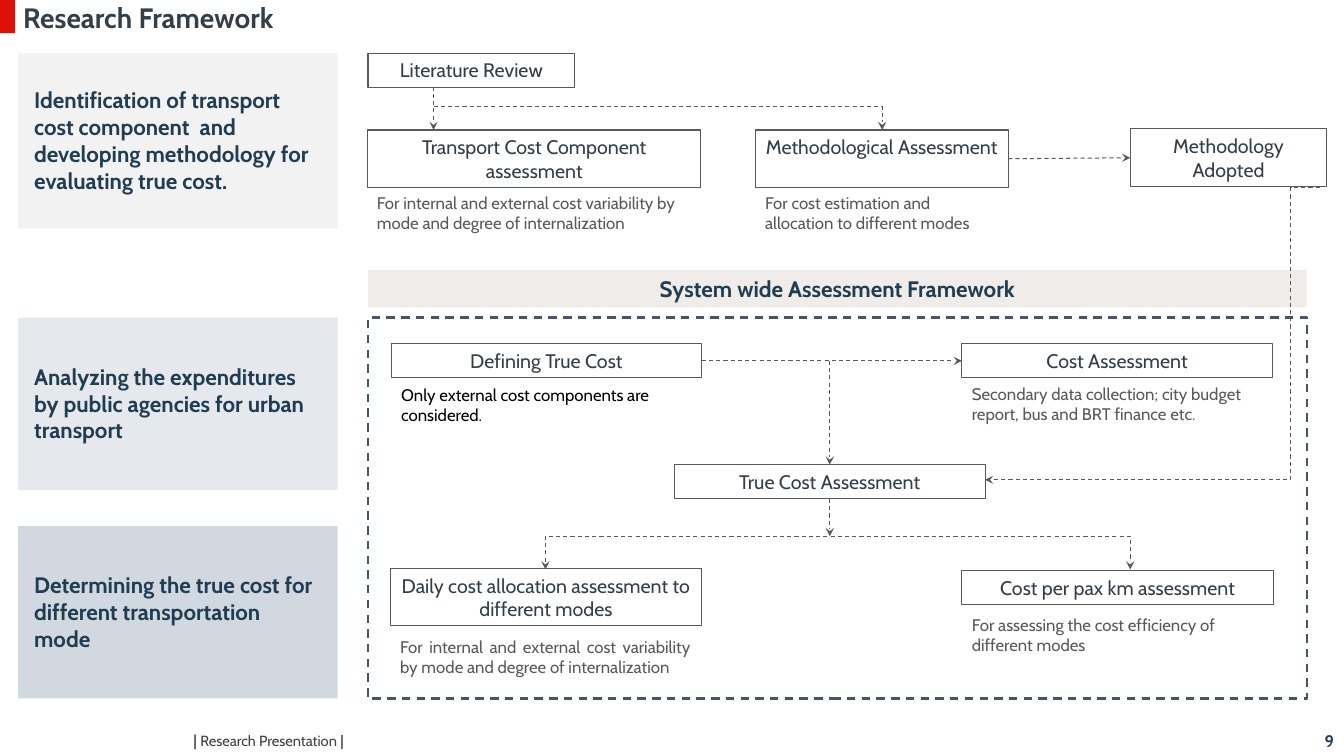
from dataclasses import dataclass

from lxml.etree import SubElement
from pptx import Presentation
from pptx.dml.color import RGBColor
from pptx.enum.dml import MSO_LINE
from pptx.enum.shapes import MSO_CONNECTOR, MSO_SHAPE
from pptx.enum.text import MSO_ANCHOR, PP_ALIGN
from pptx.oxml.ns import qn
from pptx.util import Inches, Pt


@dataclass(frozen=True)
class Theme:
    font: str = "Cabin"
    accent: str = "DF1007"
    navy: str = "203D52"
    slate: str = "44546A"
    ink: str = "343E48"
    footer: str = "404040"
    grey: str = "595959"
    black: str = "000000"
    white: str = "FFFFFF"
    band: str = "EFECEA"
    stages: tuple = ("F2F2F2", "E5E9ED", "D2D8DF")
    title_size: float = 20
    heading_size: float = 16
    box_size: float = 14
    note_size: float = 12
    bar_size: float = 11
    footer_size: float = 10.5


theme = Theme()
prs = Presentation()
prs.slide_width, prs.slide_height = Inches(13.33), Inches(7.5)
s = prs.slides.add_slide(prs.slide_layouts[6])
s.background.fill.solid()
s.background.fill.fore_color.rgb = RGBColor.from_string(theme.white)


def add_box(x, y, w, h, text="", size=theme.box_size, color=theme.ink, bold=False,
            align=PP_ALIGN.LEFT, anchor=MSO_ANCHOR.TOP, fill=None, line=None, panel=False):
    area = [Inches(v) for v in (x, y, w, h)]
    if panel:
        sp = s.shapes.add_shape(MSO_SHAPE.RECTANGLE, *area)
        sp.shadow.inherit = False
        if fill:
            sp.fill.solid()
            sp.fill.fore_color.rgb = RGBColor.from_string(fill)
        else:
            sp.fill.background()
        if line:
            sp.line.color.rgb = RGBColor.from_string(line)
            sp.line.width = Pt(0.75)
        else:
            sp.line.fill.background()
    else:
        sp = s.shapes.add_textbox(*area)
    if text:
        tf = sp.text_frame
        tf.word_wrap = True
        tf.vertical_anchor = anchor
        tf.text = text
        p = tf.paragraphs[0]
        p.alignment = align
        f = p.runs[0].font
        f.name, f.size, f.bold = theme.font, Pt(size), bold
        f.color.rgb = RGBColor.from_string(color)
    return sp


def style_arrow(sp, ends=("tailEnd",)):
    sp.line.color.rgb = RGBColor.from_string(theme.grey)
    sp.line.width = Pt(0.75)
    sp.line.dash_style = MSO_LINE.DASH
    ln = sp.line._get_or_add_ln()
    for end in ends:
        SubElement(ln, qn("a:" + end), type="stealth")
    pr = sp._element.spPr
    if pr.find(qn("a:effectLst")) is None:
        SubElement(pr, qn("a:effectLst"))


add_box(0, 0, 0.15, 0.33, fill=theme.accent, panel=True)
title = add_box(0, 0, 12.41, 0.38, "Research Framework", theme.title_size, bold=True,
                anchor=MSO_ANCHOR.MIDDLE)
title.text_frame.margin_left = Inches(0.23)
title.text_frame.paragraphs[0].line_spacing = 0.9

add_box(10.33, 7.2, 3, 0.29, "9", theme.note_size, theme.navy, True, PP_ALIGN.RIGHT)
footer = add_box(1.82, 7.2, 5.34, 0.29, "|", theme.bar_size, theme.footer, True,
                 anchor=MSO_ANCHOR.MIDDLE)
for text, bold in ((" Research Presentation ", False), ("|", True)):
    r = footer.text_frame.paragraphs[0].add_run()
    r.text = text
    r.font.name, r.font.size, r.font.bold = theme.font, Pt(theme.footer_size), bold
    r.font.color.rgb = RGBColor.from_string(theme.footer)

stages = (
    (0.53, 1.74, 1.18, "Identification of transport cost component  and developing methodology "
                       "for evaluating true cost."),
    (3.15, 1.71, 0.91, "Analyzing the expenditures by public agencies for urban transport"),
    (5.22, 1.71, 0.91, "Determining the true cost for different transportation mode"),
)
for (y, h, text_h, text), fill in zip(stages, theme.stages):
    add_box(0.18, y, 3.17, h, fill=fill, panel=True)
    add_box(0.24, y + (h - text_h) / 2, 2.99, text_h, text, theme.heading_size,
            theme.navy, True)

add_box(3.65, 2.68, 9.31, 0.37, "System wide Assessment Framework", theme.heading_size,
        theme.navy, True, PP_ALIGN.CENTER, fill=theme.band, panel=True)
frame = add_box(3.65, 3.15, 9.31, 3.78, line=theme.slate, panel=True)
frame.line.width = Pt(1.5)
frame.line.dash_style = MSO_LINE.DASH

steps = (
    ("Literature Review", 3.65, 0.53, 2.05, 0.34),
    ("Transport Cost Component assessment", 3.65, 1.29, 3.3, 0.57),
    ("Methodological Assessment", 7.49, 1.29, 2.51, 0.57),
    ("Methodology Adopted", 11.21, 1.28, 1.95, 0.57),
    ("Defining True Cost", 3.88, 3.41, 3.08, 0.34),
    ("Cost Assessment", 9.54, 3.41, 3.08, 0.34),
    ("True Cost Assessment", 6.69, 4.61, 3.08, 0.34),
    ("Daily cost allocation assessment to different modes", 3.87, 5.64, 3.09, 0.57),
    ("Cost per pax km assessment", 9.54, 5.66, 3.09, 0.34),
)
boxes = {}
for text, *area in steps:
    boxes[text] = add_box(*area, text, align=PP_ALIGN.CENTER, line=theme.grey, panel=True)

variability = "For internal and external cost variability by mode and degree of internalization"
notes = (
    (variability, 3.64, 1.86, 3.31, theme.grey, PP_ALIGN.LEFT),
    ("For cost estimation and allocation to different modes", 7.49, 1.86, 2.51,
     theme.grey, PP_ALIGN.LEFT),
    ("Only external cost components are considered.", 3.88, 3.77, 3.08,
     theme.black, PP_ALIGN.LEFT),
    ("Secondary data collection; city budget report, bus and BRT finance etc.",
     9.54, 3.76, 3.09, theme.grey, PP_ALIGN.LEFT),
    (variability, 3.87, 6.27, 3.08, theme.grey, PP_ALIGN.JUSTIFY),
    ("For assessing the cost efficiency of different modes", 9.54, 6.05, 3.08,
     theme.grey, PP_ALIGN.LEFT),
)
for text, x, y, w, color, align in notes:
    add_box(x, y, w, 0.5, text, theme.note_size, color, align=align)

straight, elbow = MSO_CONNECTOR.STRAIGHT, MSO_CONNECTOR.ELBOW
arrows = (
    (straight, 4.3, 0.86, 4.3, 1.29, None, None),
    (straight, 10, 1.57, 11.21, 1.57,
     ("Methodological Assessment", 3), ("Methodology Adopted", 1)),
    (straight, 6.96, 3.58, 9.54, 3.58, ("Defining True Cost", 3), ("Cost Assessment", 1)),
    (straight, 8.23, 3.58, 8.23, 4.61, None, ("True Cost Assessment", 0)),
    (straight, 8.23, 4.95, 8.23, 5.32, ("True Cost Assessment", 2), None),
    (elbow, 4.3, 1.06, 8.75, 1.29, None, None),
    (elbow, 13.09, 1.86, 9.77, 4.76, None, None),
)
for kind, x1, y1, x2, y2, start, end in arrows:
    cx = s.shapes.add_connector(kind, Inches(x1), Inches(y1), Inches(x2), Inches(y2))
    if start:
        cx.begin_connect(boxes[start[0]], start[1])
    if end:
        cx.end_connect(boxes[end[0]], end[1])
    if kind == elbow:
        geom = cx._element.spPr.find(qn("a:prstGeom"))
        if x2 > x1:
            geom.set("prst", "bentConnector2")
        else:
            guides = geom.find(qn("a:avLst"))
            SubElement(guides, qn("a:gd"), name="adj1", fmla="val 8700")
    style_arrow(cx)

fork = s.shapes.build_freeform(Inches(5.41), Inches(5.65))
fork.add_line_segments([(Inches(x), Inches(y)) for x, y in
                        ((5.41, 5.32), (11.21, 5.32), (11.21, 5.65))], close=False)
sp = fork.convert_to_shape()
sp.shadow.inherit = False
sp.fill.background()
style_arrow(sp, ("headEnd", "tailEnd"))

prs.save("out.pptx")
